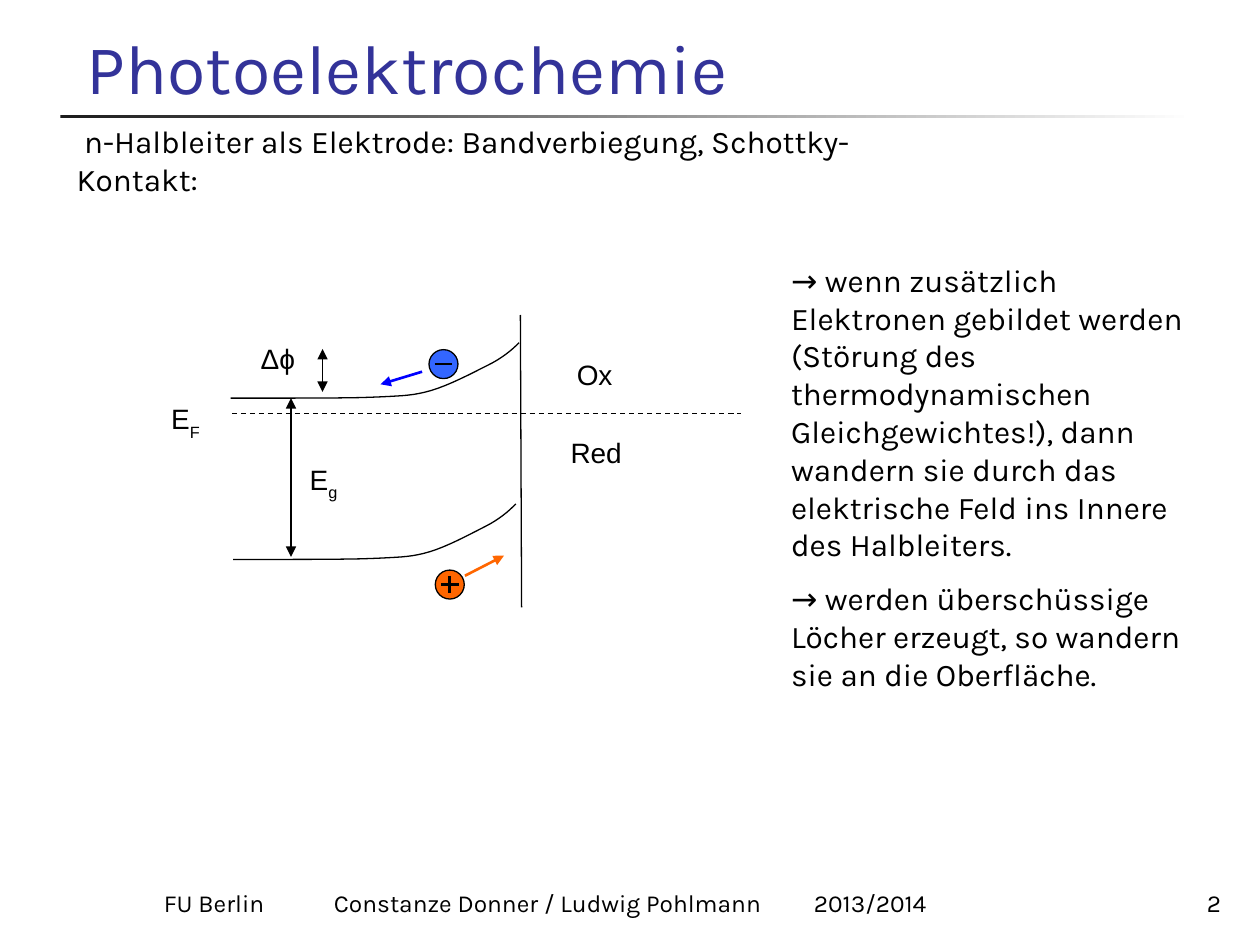
from lxml.etree import SubElement
from pptx import Presentation
from pptx.dml.color import RGBColor
from pptx.enum.dml import MSO_LINE
from pptx.enum.shapes import MSO_CONNECTOR, MSO_SHAPE
from pptx.enum.text import MSO_ANCHOR, PP_ALIGN
from pptx.oxml.ns import qn
from pptx.util import Inches, Pt

BLACK, WHITE, NAVY = "000000", "FFFFFF", "333399"
BLUE, ELECTRON, HOLE = "0000FF", "3366FF", "FF6600"

TITLE = "Photoelektrochemie"
SUBTITLE = " n-Halbleiter als Elektrode: Bandverbiegung, Schottky-Kontakt:"
EXPLANATION = [
    "→ wenn zusätzlich Elektronen gebildet werden (Störung des thermodynamischen "
    "Gleichgewichtes!), dann wandern sie durch das elektrische Feld ins Innere des Halbleiters.",
    "→ werden überschüssige Löcher erzeugt, so wandern sie an die Oberfläche.",
]
FOOTER = ["FU Berlin", "Constanze Donner / Ludwig Pohlmann", "2013/2014"]
FOOTER_TABS = [1.35, 5.16]
PAGE = "2"

LABELS = [
    ("Ox", "", (4.48, 2.79, 0.57, 0.39)),
    ("Red", "", (4.43, 3.41, 0.72, 0.39)),
    ("E", "F", (1.26, 3.14, 0.49, 0.39)),
    ("E", "g", (2.36, 3.62, 0.49, 0.39)),
    ("Δϕ", "", (1.97, 2.66, 0.51, 0.41)),
]
BAND_START = (0, 0.44)
BAND_BENDS = [
    ((0.13, 0.44), (0.26, 0.44), (0.46, 0.44)),
    ((0.65, 0.44), (1.0, 0.44), (1.19, 0.43)),
    ((1.38, 0.42), (1.45, 0.42), (1.59, 0.38)),
    ((1.73, 0.34), (1.92, 0.24), (2.04, 0.18)),
    ((2.16, 0.12), (2.23, 0.06), (2.29, 0)),
]
BANDS = [(1.83, 2.72, 1), (1.85, 4.0, 0.98)]
LINES = [
    ((1.84, 3.28), (5.88, 3.28), dict(dash=MSO_LINE.DASH)),
    ((4.13, 2.5), (4.14, 4.82), {}),
    ((2.31, 3.16), (2.31, 4.42), dict(ends=("headEnd", "tailEnd"))),
    ((2.56, 2.77), (2.56, 3.11), dict(ends=("headEnd", "tailEnd"))),
    ((3.35, 2.95), (3.02, 3.05), dict(color=BLUE, width=1.5, ends=("tailEnd",))),
    ((3.69, 4.57), (4.0, 4.41), dict(color=HOLE, width=1.5, ends=("tailEnd",))),
]
CHARGE_SIZE, SIGN_ARM = 0.23, 0.07
CHARGES = [("+", HOLE, (3.57, 4.64)), ("−", ELECTRON, (3.52, 2.89))]

deck = Presentation()
deck.slide_width, deck.slide_height = Inches(10), Inches(7.5)
slide = deck.slides.add_slide(deck.slide_layouts[6])
shapes = slide.shapes


def rgb(value):
    return RGBColor.from_string(value)


def inches(values):
    return [Inches(v) for v in values]


def stroke(line, color=BLACK, width=0.75):
    line.color.rgb = rgb(color)
    line.width = Pt(width)


def add_text(paragraphs, box, size=18, font="Karla", color=BLACK, align=PP_ALIGN.LEFT,
             anchor=MSO_ANCHOR.TOP, gap=0, sub="", fill=None):
    holder = shapes.add_textbox(*inches(box))
    if fill:
        holder.fill.solid()
        holder.fill.fore_color.rgb = rgb(fill)
    frame = holder.text_frame
    frame.word_wrap = True
    frame.vertical_anchor = anchor
    for i, words in enumerate(paragraphs):
        paragraph = frame.add_paragraph() if i else frame.paragraphs[0]
        paragraph.alignment = align
        if i:
            paragraph.space_before = Pt(gap)
        for part in filter(None, (words, sub)):
            run = paragraph.add_run()
            run.text = part
            run.font.size, run.font.name = Pt(size), font
            run.font.color.rgb = rgb(color)
        if sub:
            run.font._element.set("baseline", "-30000")
    return frame


def add_line(start, end, color=BLACK, width=0.75, dash=None, ends=()):
    connector = shapes.add_connector(MSO_CONNECTOR.STRAIGHT, *inches(start + end))
    stroke(connector.line, color, width)
    if dash:
        connector.line.dash_style = dash
    for end_tag in ends:
        SubElement(connector.line._get_or_add_ln(), qn("a:" + end_tag), type="triangle")
    SubElement(connector._element.spPr, qn("a:effectLst"))


def bezier(p0, p1, p2, p3, t):
    u = 1 - t
    return tuple(u**3 * a + 3 * u * u * t * b + 3 * u * t * t * c + t**3 * d
                 for a, b, c, d in zip(p0, p1, p2, p3))


def add_band(left, top, stretch, steps=8):
    points, start = [BAND_START], BAND_START
    for bend in BAND_BENDS:
        points += [bezier(start, *bend, k / steps) for k in range(1, steps + 1)]
        start = bend[-1]
    placed = [inches((left + x * stretch, top + y)) for x, y in points]
    builder = shapes.build_freeform(*placed[0])
    builder.add_line_segments(placed[1:], close=False)
    band = builder.convert_to_shape()
    band.fill.background()
    stroke(band.line)
    band.shadow.inherit = False


def add_charge(sign, color, center):
    x, y = center
    half = CHARGE_SIZE / 2
    disc = shapes.add_shape(MSO_SHAPE.OVAL, *inches((x - half, y - half, CHARGE_SIZE, CHARGE_SIZE)))
    disc.fill.solid()
    disc.fill.fore_color.rgb = rgb(color)
    stroke(disc.line)
    disc.shadow.inherit = False
    add_line((x - SIGN_ARM, y), (x + SIGN_ARM, y), width=1.5)
    if sign == "+":
        add_line((x, y - SIGN_ARM), (x, y + SIGN_ARM), width=1.5)


rule = shapes.add_shape(MSO_SHAPE.RECTANGLE, *inches((0.48, 0.91, 9, 0.03)))
rule.fill.gradient()
rule.fill.gradient_angle = 0
for stop, shade in zip(rule.fill.gradient_stops, ("1C1C1C", WHITE)):
    stop.color.rgb = rgb(shade)
rule.line.fill.background()
rule.shadow.inherit = False

footer = add_text(["\t".join(FOOTER)], (0.35, 6.83, 7.95, 0.5), size=14, anchor=MSO_ANCHOR.BOTTOM)
footer.margin_left = Inches(0.95)
tabs = SubElement(footer.paragraphs[0]._p.get_or_add_pPr(), qn("a:tabLst"))
for tab in FOOTER_TABS:
    SubElement(tabs, qn("a:tab"), pos=str(Inches(tab)), algn="l")

add_text([PAGE], (8.47, 6.83, 1.32, 0.5), size=14, align=PP_ALIGN.RIGHT, anchor=MSO_ANCHOR.BOTTOM)
add_text([TITLE], (0.59, 0.23, 9.19, 0.68), size=40, color=NAVY, anchor=MSO_ANCHOR.BOTTOM)
add_text([SUBTITLE], (0.51, 1.07, 7.18, 0.4), anchor=MSO_ANCHOR.MIDDLE)

for words, sub, box in LABELS:
    add_text([words], box, size=16, font="Arial", sub=sub, fill=WHITE)
for band in BANDS:
    add_band(*band)
for start, end, style in LINES:
    add_line(start, end, **style)
for charge in CHARGES:
    add_charge(*charge)

add_text(EXPLANATION, (6.18, 2.02, 3.46, 3.58), gap=9)

deck.save("out.pptx")
